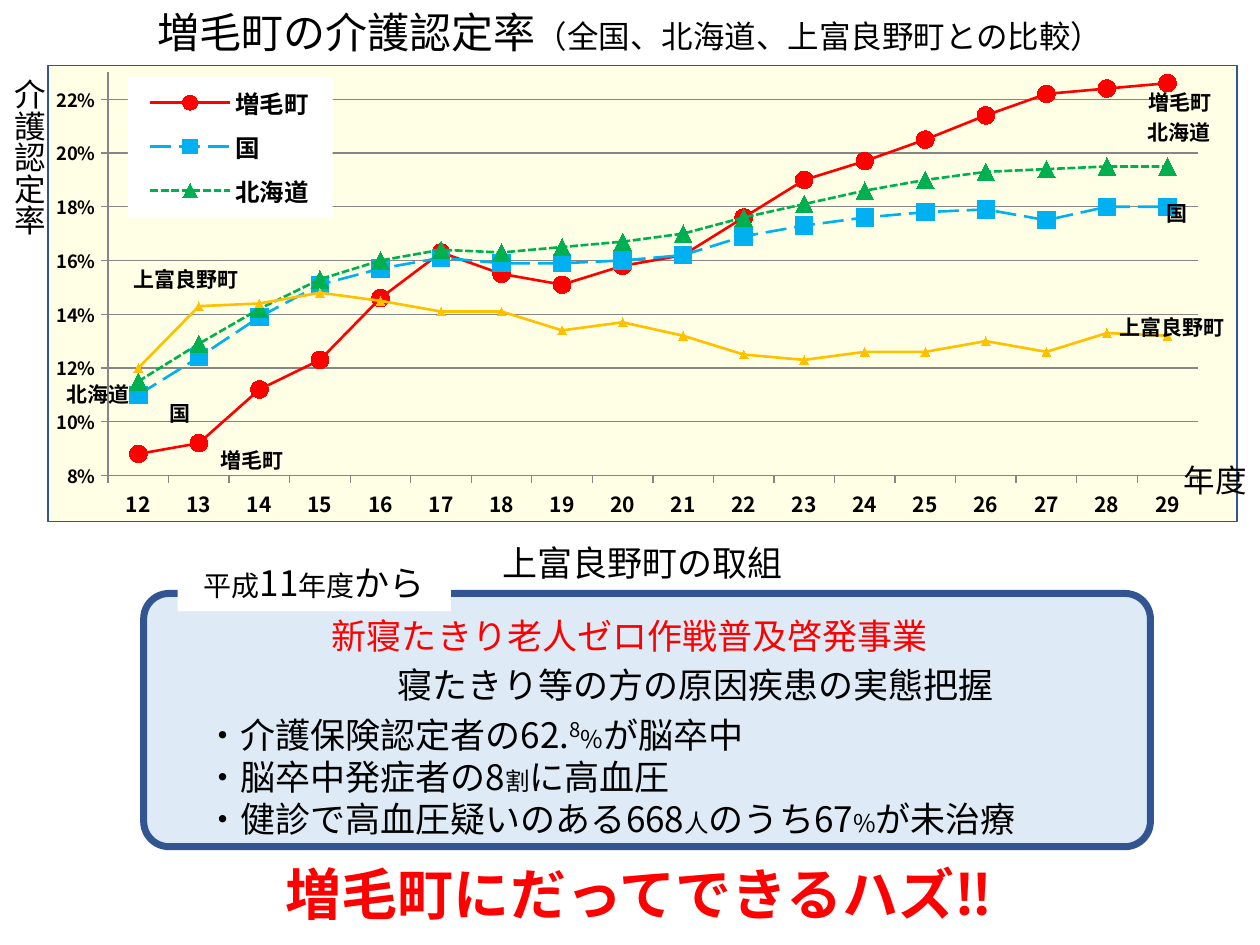
from lxml.etree import SubElement
from pptx import Presentation
from pptx.chart.data import CategoryChartData
from pptx.dml.color import RGBColor
from pptx.enum.chart import XL_CHART_TYPE as ChartType, XL_LEGEND_POSITION as LegendPosition
from pptx.enum.chart import XL_MARKER_STYLE as Marker, XL_TICK_MARK as Tick
from pptx.enum.dml import MSO_LINE as Dash
from pptx.enum.shapes import MSO_SHAPE as Shape
from pptx.enum.text import MSO_ANCHOR as Anchor, MSO_AUTO_SIZE as AutoSize, PP_ALIGN as Align
from pptx.oxml import parse_xml
from pptx.oxml.ns import nsdecls, qn
from pptx.util import Inches, Pt

FONT = "Noto Sans CJK JP"
BLACK, RED, BLUE, WHITE, GREY = "000000", "FF0000", "325491", "FFFFFF", "868686"

YEARS = [str(year) for year in range(12, 30)]
# name, percentages, colour, marker, marker size, dash
RATES = [
    ("増毛町", [8.8, 9.2, 11.2, 12.3, 14.6, 16.3, 15.5, 15.1, 15.8, 16.2, 17.6, 19, 19.7,
             20.5, 21.4, 22.2, 22.4, 22.6], RED, Marker.CIRCLE, 10, None),
    ("国", [11, 12.4, 13.9, 15.1, 15.7, 16.1, 15.9, 15.9, 16, 16.2, 16.9, 17.3, 17.6,
           17.8, 17.9, 17.5, 18, 18], "00B0F0", Marker.SQUARE, 10, Dash.LONG_DASH),
    ("北海道", [11.5, 12.9, 14.2, 15.3, 16, 16.4, 16.3, 16.5, 16.7, 17, 17.6, 18.1, 18.6,
             19, 19.3, 19.4, 19.5, 19.5], "00B050", Marker.TRIANGLE, 10, Dash.SQUARE_DOT),
    ("上富良野町", [12, 14.3, 14.4, 14.8, 14.5, 14.1, 14.1, 13.4, 13.7, 13.2, 12.5, 12.3,
               12.6, 12.6, 13, 12.6, 13.3, 13.2], "FFC000", Marker.TRIANGLE, 5, None),
]
LINE_LABELS = [
    ("増毛町", 9.02, 0.66, 0.71), ("国", 9.16, 1.54, 0.37), ("上富良野町", 8.79, 2.45, 1.04),
    ("北海道", 9.01, 0.9, 0.71), ("上富良野町", 0.96, 2.07, 1.04), ("国", 1.25, 3.13, 0.31),
    ("北海道", 0.43, 2.98, 0.71), ("増毛町", 1.65, 3.5, 0.71),
]
# Each paragraph is a list of (text, size, baseline percentage)
FINDINGS = [
    [("・介護保険認定者の62.", 20), ("8", 20, 30), ("%", 14), ("が脳卒中", 20)],
    [("・脳卒中発症者の8", 20), ("割", 14), ("に高血圧", 20)],
    [("・健診で高血圧疑いのある668", 20), ("人", 14), ("のうち67", 20), ("%", 14), ("が未治療", 20)],
]


def colour(value):
    return RGBColor.from_string(value)


def manual_layout(x, y, width, height, inner=False):
    target = '<c:layoutTarget val="inner"/>' if inner else ""
    return parse_xml(
        f'<c:layout {nsdecls("c")}><c:manualLayout>{target}'
        '<c:xMode val="edge"/><c:yMode val="edge"/>'
        f'<c:x val="{x}"/><c:y val="{y}"/><c:w val="{width}"/><c:h val="{height}"/>'
        '</c:manualLayout></c:layout>')


def remove_layout(parent):
    """Drop any automatic layout so that a manual one can be set."""
    for layout in parent.findall(qn("c:layout")):
        parent.remove(layout)


class SlideBuilder:
    def __init__(self, page):
        self.page = page

    def style_font(self, font, size, bold=False, value=BLACK):
        font.name, font.size, font.bold = FONT, Pt(size), bold
        font.color.rgb = colour(value)

    def set_text(self, frame, paragraphs, align=Align.LEFT, value=BLACK, bold=False):
        frame.auto_size, frame.vertical_anchor = AutoSize.NONE, Anchor.TOP
        for index, spans in enumerate(paragraphs):
            para = frame.paragraphs[0] if index == 0 else frame.add_paragraph()
            para.alignment = align
            for text, size, *baseline in spans:
                span = para.add_run()
                span.text = text
                self.style_font(span.font, size, bold, value)
                props = span.font._element
                SubElement(props, qn("a:ea")).set("typeface", FONT)
                if baseline:
                    props.set("baseline", str(baseline[0] * 1000))

    def title(self, left, top, width, height, spans):
        title = self.page.shapes.title
        title.left, title.top = Inches(left), Inches(top)
        title.width, title.height = Inches(width), Inches(height)
        self.set_text(title.text_frame, [spans], Align.CENTER)

    def text(self, left, top, width, height, paragraphs, wrap=True, vertical=False, **style):
        box = self.page.shapes.add_textbox(*map(Inches, (left, top, width, height)))
        frame = box.text_frame
        frame.word_wrap = wrap
        if vertical:
            frame._txBody.bodyPr.set("vert", "eaVert")
        self.set_text(frame, paragraphs, **style)

    def panel(self, kind, left, top, width, height, fill, line=0):
        panel = self.page.shapes.add_shape(kind, *map(Inches, (left, top, width, height)))
        panel.shadow.inherit = False
        panel.fill.solid()
        panel.fill.fore_color.rgb = colour(fill)
        if line:
            panel.line.color.rgb = colour(BLUE)
            panel.line.width = Pt(line)
        else:
            panel.line.fill.background()
        return panel

    def line_chart(self, left, top, width, height):
        data = CategoryChartData(number_format="0.0%")
        data.categories = YEARS
        for name, percentages, *_ in RATES:
            data.add_series(name, [round(value / 100, 3) for value in percentages])
        chart = self.page.shapes.add_chart(
            ChartType.LINE_MARKERS, *map(Inches, (left, top, width, height)), data).chart
        chart.has_title = False
        self.style_font(chart.font, 10)
        self.style_axes(chart)
        self.style_legend(chart)
        plot_area = chart._chartSpace.chart.plotArea
        remove_layout(plot_area)
        plot_area.insert(0, manual_layout(0.045, 0.021, 0.932, 0.89, inner=True))
        for series, (_, _, value, marker, size, dash) in zip(chart.plots[0].series, RATES):
            series.smooth = False
            line = series.format.line
            line.color.rgb, line.width = colour(value), Pt(1.5)
            if dash:
                line.dash_style = dash
            series.marker.style, series.marker.size = marker, size
            series.marker.format.fill.solid()
            series.marker.format.fill.fore_color.rgb = colour(value)
            series.marker.format.line.color.rgb = colour(value)

    def style_axes(self, chart):
        for axis, size in ((chart.category_axis, 12), (chart.value_axis, 10.5)):
            self.style_font(axis.tick_labels.font, size, bold=True)
            axis.major_tick_mark, axis.minor_tick_mark = Tick.OUTSIDE, Tick.NONE
            axis.format.line.color.rgb = colour(GREY)
        rate_axis = chart.value_axis
        rate_axis.minimum_scale, rate_axis.maximum_scale = 0.08, 0.23
        rate_axis.major_unit = 0.02
        rate_axis.tick_labels.number_format = "0%"
        rate_axis.tick_labels.number_format_is_linked = False
        rate_axis.has_major_gridlines = True
        rate_axis.major_gridlines.format.line.color.rgb = colour(GREY)

    def style_legend(self, chart):
        """White legend inside the plot, without the last series."""
        chart.has_legend = True
        legend = chart.legend
        legend.position, legend.include_in_layout = LegendPosition.RIGHT, False
        self.style_font(legend.font, 14, bold=True)
        element = legend._element
        remove_layout(element)
        position = element.find(qn("c:legendPos"))
        position.addnext(manual_layout(0.062, 0.03, 0.175, 0.31))
        position.addnext(parse_xml(
            f'<c:legendEntry {nsdecls("c")}><c:idx val="{len(RATES) - 1}"/>'
            '<c:delete val="1"/></c:legendEntry>'))
        element.find(qn("c:overlay")).addnext(parse_xml(
            f'<c:spPr {nsdecls("c", "a")}><a:solidFill><a:srgbClr val="{WHITE}"/>'
            '</a:solidFill></c:spPr>'))


def main():
    deck = Presentation()
    deck.slide_width, deck.slide_height = Inches(10), Inches(7.5)
    slide = SlideBuilder(deck.slides.add_slide(deck.slide_layouts[5]))

    slide.title(0, 0, 10, 0.5, [("増毛町の介護認定率", 24), ("（全国、北海道、上富良野町との比較）", 18)])
    programme = slide.panel(Shape.ROUNDED_RECTANGLE, 1.14, 4.71, 7.99, 2.01, "DEEBF7", 4)
    programme.adjustments[0] = 0.1
    slide.panel(Shape.RECTANGLE, 0.38, 0.52, 9.44, 3.62, "FFFFE5", 1)
    slide.line_chart(0.44, 0.5, 9.28, 3.62)
    slide.text(-0.07, 0.53, 0.5, 1.73, [[("介護認定率", 18)]], vertical=True, align=Align.JUSTIFY)
    slide.text(9.28, 3.61, 0.73, 0.4, [[("年度", 18)]], align=Align.CENTER)
    for name, left, top, width in LINE_LABELS:
        slide.text(left, top, width, 0.3, [[(name, 12)]], wrap=False, bold=True)

    slide.text(3.65, 4.25, 2.9, 0.44, [[("上富良野町の取組", 20)]], align=Align.CENTER)
    start = slide.panel(Shape.RECTANGLE, 1.41, 4.41, 2.17, 0.44, WHITE)
    slide.set_text(start.text_frame, [[("平成", 16), ("11", 20), ("年度", 16), ("から", 20)]], Align.CENTER)
    slide.text(2.5, 4.83, 5, 0.44, [[("新寝たきり老人ゼロ作戦普及啓発事業", 20)]],
               align=Align.CENTER, value=RED)
    slide.text(3.06, 5.22, 5, 0.44, [[("寝たきり等の方の原因疾患の実態把握", 20)]])
    slide.text(1.53, 5.61, 7.31, 1.11, FINDINGS)
    slide.text(1.77, 6.77, 6.61, 0.64, [[("増毛町にだってできるハズ‼", 32)]],
               align=Align.CENTER, value=RED, bold=True)
    deck.save("out.pptx")


if __name__ == "__main__":
    main()
